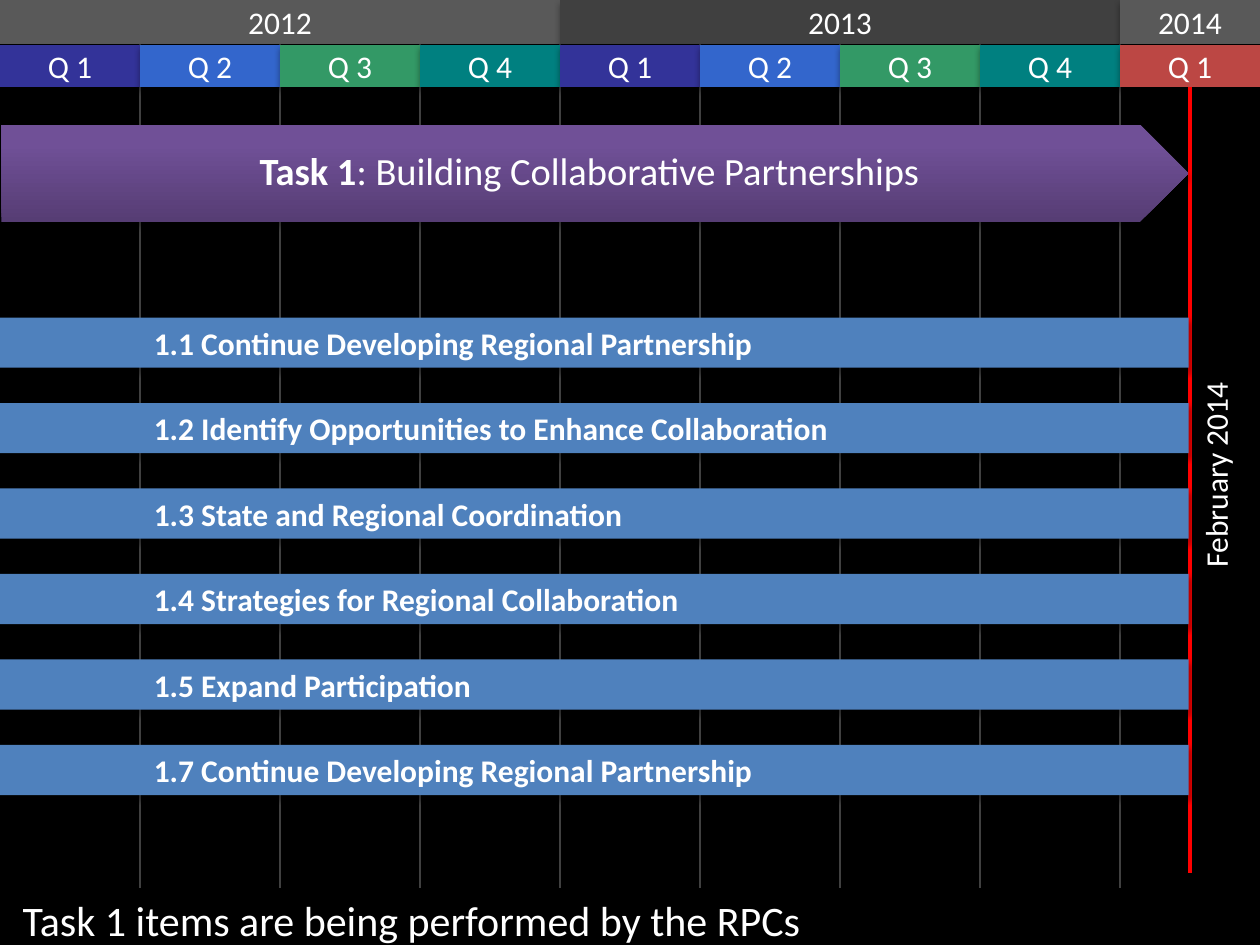
from lxml.etree import SubElement
from pptx import Presentation
from pptx.dml.color import RGBColor
from pptx.enum.shapes import MSO_CONNECTOR, MSO_SHAPE
from pptx.enum.text import MSO_ANCHOR, MSO_AUTO_SIZE, PP_ALIGN
from pptx.oxml.ns import qn
from pptx.util import Inches, Pt

COLORS = {
    "black": "000000", "white": "FFFFFF", "grid": "404040", "today": "FF0000",
    "year": "595959", "year_alt": "404040", "bar": "4F81BD",
    "arrow_dark": "563D74", "arrow_light": "705097",
    "q1": "333399", "q2": "3366CC", "q3": "339966", "q4": "008080", "q_last": "BC4744",
}
WIDTH, HEIGHT = Inches(10), Inches(7.5)
COL, ROW = WIDTH / 9, Inches(0.35)
YEARS = [("2012", 4, "year"), ("2013", 4, "year_alt"), ("2014", 1, "year")]
QUARTERS = ["q1", "q2", "q3", "q4"] * 2 + ["q_last"]
TASKS = [
    "1.1 Continue Developing Regional Partnership",
    "1.2 Identify Opportunities to Enhance Collaboration",
    "1.3 State and Regional Coordination",
    "1.4 Strategies for Regional Collaboration",
    "1.5 Expand Participation",
    "1.7 Continue Developing Regional Partnership",
]


def rgb(name):
    """Return the named colour."""
    return RGBColor.from_string(COLORS[name])


def place(box):
    """Turn a box in columns and rows into slide lengths."""
    x, y, w, h = box
    return round(x * COL), round(y * ROW), round(w * COL), round(h * ROW)


def add_effects(sp, shadow=False):
    """Give a shape an explicit effect list, with a soft shadow if asked."""
    effects = SubElement(sp.element.spPr, qn("a:effectLst"))
    if shadow:
        outer = SubElement(effects, qn("a:outerShdw"), blurRad=str(Pt(3.5)),
                           dist=str(Pt(2.2)), dir="5400000", rotWithShape="0")
        color = SubElement(outer, qn("a:srgbClr"), val=COLORS["black"])
        SubElement(color, qn("a:alpha"), val="32000")


def add_block(s, box, fill, kind=MSO_SHAPE.RECTANGLE):
    """Add a borderless filled shape with a shadow."""
    sp = s.shapes.add_shape(kind, *place(box))
    sp.fill.solid()
    sp.fill.fore_color.rgb = rgb(fill)
    sp.line.fill.background()
    add_effects(sp, shadow=True)
    return sp


def add_line(s, col, top, bottom, color, width):
    """Add a vertical line at a column, between two rows."""
    x = round(col * COL)
    line = s.shapes.add_connector(MSO_CONNECTOR.STRAIGHT, x, round(top * ROW),
                                  x, round(bottom * ROW))
    line.line.color.rgb = rgb(color)
    line.line.width = Pt(width)
    add_effects(line)
    return line


def write(sp, runs, size, align=PP_ALIGN.LEFT, anchor=MSO_ANCHOR.TOP, left=0.1):
    """Fill a shape with one paragraph of (text, bold) runs."""
    tf = sp.text_frame
    tf.word_wrap = True
    tf.auto_size = MSO_AUTO_SIZE.NONE
    tf.vertical_anchor = anchor
    tf.margin_left = Inches(left)
    p = tf.paragraphs[0]
    p.alignment = align
    for text, bold in runs:
        r = p.add_run()
        r.text = text
        r.font.name = "Calibri"
        r.font.size = Pt(size)
        r.font.bold = bold
        r.font.color.rgb = rgb("white")
    return tf


def add_grid(s, box):
    """Draw the lines between the quarters."""
    x, y, w, h = box
    for i in range(1, w):
        add_line(s, x + i, y, y + h, "grid", 0.75)


def add_header(s, box):
    """Draw the years above their quarters and return the last quarter."""
    x, y, w, h = box
    process = MSO_SHAPE.FLOWCHART_PROCESS
    cells, col = [], x
    for year, span, fill in YEARS:
        cells.append((year, (col, y, span, h / 2), fill))
        col += span
    for i, fill in enumerate(QUARTERS):
        cells.append((f"Q {i % 4 + 1}", (x + i, y + h / 2 + 0.02, 1, h / 2 - 0.05), fill))
    for text, cell, fill in cells:
        sp = add_block(s, cell, fill, process)
        write(sp, [(text, False)], 18, PP_ALIGN.CENTER, MSO_ANCHOR.MIDDLE)
    return sp


def add_today(s, quarter, bottom):
    """Drop the current-date line from a quarter and label it."""
    line = add_line(s, 8.5, 1.97, bottom, "today", 2.25)
    line.begin_connect(quarter, 2)
    label = s.shapes.add_textbox(*place((7.11, 7.8, 3.14, 1.14)))
    label.rotation = 270
    write(label, [("February 2014", False)], 18, left=0.17)


def add_task_arrow(s, box):
    """Draw the task arrow with the slide title on it."""
    x, y, w, h = box
    sp = add_block(s, box, "arrow_light", MSO_SHAPE.PENTAGON)
    sp.fill.gradient()
    sp.fill.gradient_angle = 90
    stops = sp.fill.gradient_stops
    for stop, name, position in zip(stops, ("arrow_dark", "arrow_light"), (0, 0.8)):
        stop.color.rgb = rgb(name)
        stop.position = position
    title = s.shapes.title
    title.left, title.top, title.width, title.height = place((x, y, w - 0.17, h))
    s.shapes.element.append(title.element)
    tf = write(title, [("Task 1", True), (": Building Collaborative Partnerships", False)],
               22, PP_ALIGN.CENTER, MSO_ANCHOR.MIDDLE, 0.13)
    tf.margin_right = Inches(0.03)
    tf.margin_top = tf.margin_bottom = Inches(0.06)
    tf.paragraphs[0].line_spacing = 0.9


def add_bars(s, box):
    """Draw one labelled bar per subtask, evenly spaced."""
    x, y, w, h = box
    bar_h = 1.14
    pitch = (h - bar_h) / (len(TASKS) - 1)
    for i, task in enumerate(TASKS):
        top = y + i * pitch
        add_block(s, (x, top, w, bar_h), "bar")
        label = s.shapes.add_textbox(*place((x + 1.01, top, 6.98, bar_h)))
        write(label, [(task, True)], 18)


def add_footer(s, box):
    """Draw the note along the bottom edge."""
    sp = s.shapes.add_shape(MSO_SHAPE.RECTANGLE, *place(box))
    sp.shadow.inherit = False
    sp.fill.solid()
    sp.fill.fore_color.rgb = rgb("black")
    sp.line.fill.background()
    write(sp, [("Task 1 items are being performed by the RPCs", False)], 24, left=0.18)


def main():
    """Build the timeline slide."""
    prs = Presentation()
    prs.slide_width, prs.slide_height = WIDTH, HEIGHT
    s = prs.slides.add_slide(prs.slide_layouts[5])
    s.background.fill.solid()
    s.background.fill.fore_color.rgb = rgb("black")
    add_grid(s, (0, 1, 9, 20.4))
    add_footer(s, (0, 20.14, 9, 1.46))
    last_quarter = add_header(s, (0, 0, 9, 2))
    add_today(s, last_quarter, 19.8)
    add_task_arrow(s, (0.01, 2.83, 8.48, 2.2))
    add_bars(s, (0, 7.2, 8.49, 10.83))
    prs.save("out.pptx")


if __name__ == "__main__":
    main()
